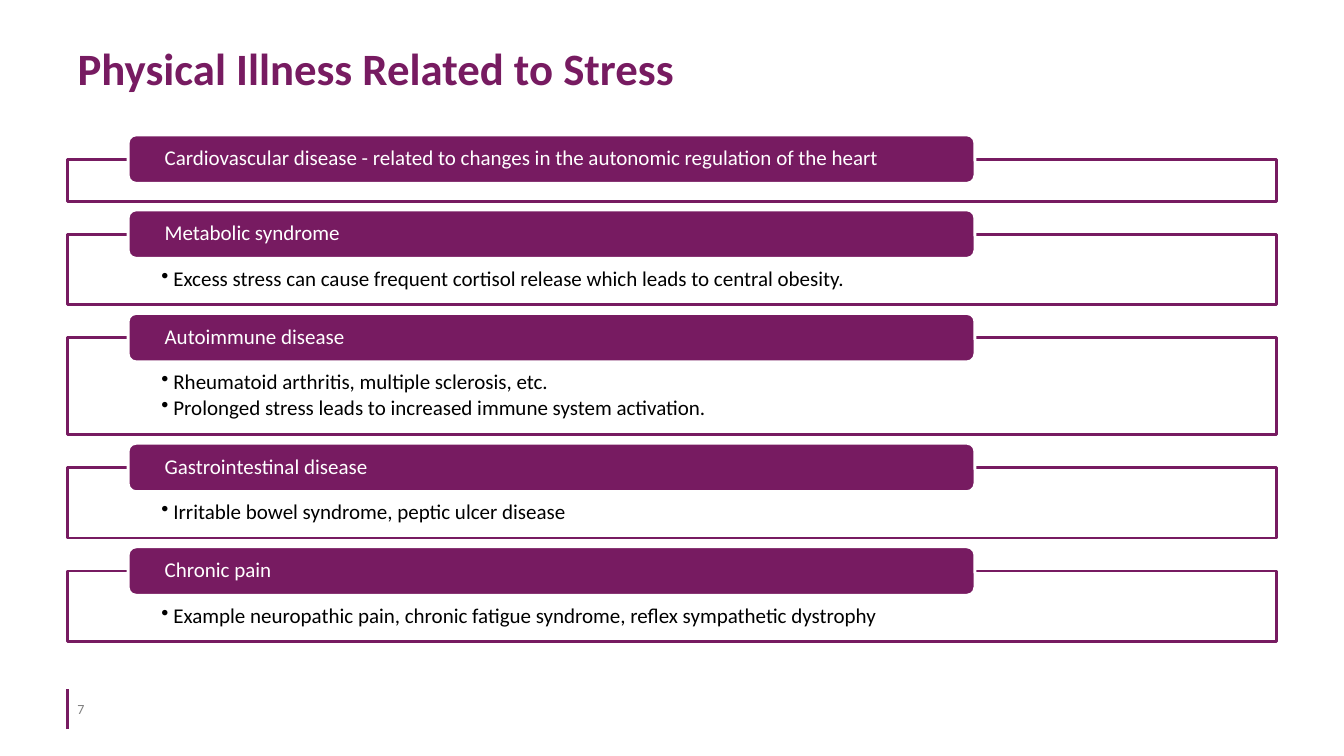
from lxml.etree import SubElement
from pptx import Presentation
from pptx.dml.color import RGBColor
from pptx.enum.shapes import MSO_CONNECTOR, MSO_SHAPE
from pptx.enum.text import MSO_ANCHOR, PP_ALIGN
from pptx.oxml.ns import qn
from pptx.util import Cm, Pt

# Content
TITLE = "Physical Illness Related to Stress"
PAGE_NUMBER = "7"
ILLNESSES = [
    ("Cardiovascular disease - related to changes in the autonomic regulation of the heart", []),
    ("Metabolic syndrome",
     ["Excess stress can cause frequent cortisol release which leads to central obesity."]),
    ("Autoimmune disease",
     ["Rheumatoid arthritis, multiple sclerosis, etc.",
      "Prolonged stress leads to increased immune system activation."]),
    ("Gastrointestinal disease", ["Irritable bowel syndrome, peptic ulcer disease"]),
    ("Chronic pain",
     ["Example neuropathic pain, chronic fatigue syndrome, reflex sympathetic dystrophy"]),
]

# Look and layout, lengths in cm
PLUM, WHITE, BLACK, GREY = "771B61", "FFFFFF", "000000", "808080"
LEFT, WIDTH = 1.7, 30.48
FIRST_TOP, GAP = 4.01, 0.83
FRAME_HEIGHTS = [1.06, 1.78, 2.44]  # by number of details
TAB_LEFT, TAB_WIDTH, TAB_HEIGHT = 3.23, 21.34, 1.22
NUMBER_TOP, NUMBER_HEIGHT = 17.35, 1.02


def color(value):
    return RGBColor.from_string(value)


def add_text(paragraph, text, size, value, bold=False):
    run = paragraph.add_run()
    run.text = text
    run.font.name = "Calibri"
    run.font.size = Pt(size)
    run.font.bold = bold
    run.font.color.rgb = color(value)


def set_insets(frame, left, top, right, bottom):
    frame.margin_left, frame.margin_top = Cm(left), Cm(top)
    frame.margin_right, frame.margin_bottom = Cm(right), Cm(bottom)


def add_box(slide, preset, left, top, width, height, fill, line):
    box = slide.shapes.add_shape(preset, Cm(left), Cm(top), Cm(width), Cm(height))
    box.shadow.inherit = False
    box.fill.solid()
    box.fill.fore_color.rgb = color(fill)
    box.line.color.rgb = color(line)
    box.line.width = Pt(2)
    box.text_frame.word_wrap = True
    return box


def add_bullet(paragraph, text):
    properties = paragraph._p.get_or_add_pPr()
    properties.set("marL", str(Cm(0.3)))
    properties.set("indent", str(-Cm(0.3)))
    SubElement(properties, qn("a:buChar")).set("char", "•")
    paragraph.alignment = PP_ALIGN.LEFT
    paragraph.line_spacing = 0.9
    paragraph.space_after = Pt(2.25)
    add_text(paragraph, text, 15, BLACK)


def add_illness(slide, top, height, illness, details):
    # Outlined frame with the details
    frame = add_box(slide, MSO_SHAPE.RECTANGLE, LEFT, top, WIDTH, height, WHITE, PLUM)
    fill_color = frame.fill._xPr.find(qn("a:solidFill"))[0]
    SubElement(fill_color, qn("a:alpha")).set("val", "90000")
    body = frame.text_frame
    body.vertical_anchor = MSO_ANCHOR.TOP
    set_insets(body, 2.37, 0.86, 2.37, 0.3)
    for index, detail in enumerate(details):
        add_bullet(body.add_paragraph() if index else body.paragraphs[0], detail)

    # Heading tab centred on the frame's top edge
    tab = add_box(slide, MSO_SHAPE.ROUNDED_RECTANGLE, TAB_LEFT, top - TAB_HEIGHT / 2,
                  TAB_WIDTH, TAB_HEIGHT, PLUM, WHITE)
    tab.text_frame.vertical_anchor = MSO_ANCHOR.MIDDLE
    set_insets(tab.text_frame, 0.86, 0, 0.86, 0)
    heading = tab.text_frame.paragraphs[0]
    heading.alignment = PP_ALIGN.LEFT
    heading.line_spacing = 0.9
    add_text(heading, illness, 15, WHITE)


def main():
    prs = Presentation()
    prs.slide_width, prs.slide_height = Cm(33.87), Cm(19.05)
    slide = prs.slides.add_slide(prs.slide_layouts[5])

    # Title
    title = slide.shapes.title
    title.left, title.top, title.width, title.height = Cm(LEFT), Cm(0.38), Cm(WIDTH), Cm(2.64)
    title.text_frame.vertical_anchor = MSO_ANCHOR.MIDDLE
    title_line = title.text_frame.paragraphs[0]
    title_line.alignment = PP_ALIGN.LEFT
    add_text(title_line, TITLE, 32, PLUM, bold=True)

    # Page number and its rule
    rule = slide.shapes.add_connector(MSO_CONNECTOR.STRAIGHT, Cm(LEFT),
                                      Cm(NUMBER_TOP + NUMBER_HEIGHT), Cm(LEFT), Cm(NUMBER_TOP))
    rule.line.color.rgb = color(PLUM)
    rule.line.width = Pt(2.25)
    SubElement(rule._element.spPr, qn("a:effectLst"))
    number = slide.shapes.add_textbox(Cm(LEFT), Cm(NUMBER_TOP), Cm(1.55), Cm(NUMBER_HEIGHT))
    number.text_frame.word_wrap = True
    number.text_frame.vertical_anchor = MSO_ANCHOR.MIDDLE
    add_text(number.text_frame.paragraphs[0], PAGE_NUMBER, 10, GREY)

    # Illnesses, stacked with equal gaps
    top = FIRST_TOP
    for illness, details in ILLNESSES:
        height = FRAME_HEIGHTS[len(details)]
        add_illness(slide, top, height, illness, details)
        top += height + GAP

    prs.save("out.pptx")


if __name__ == "__main__":
    main()
